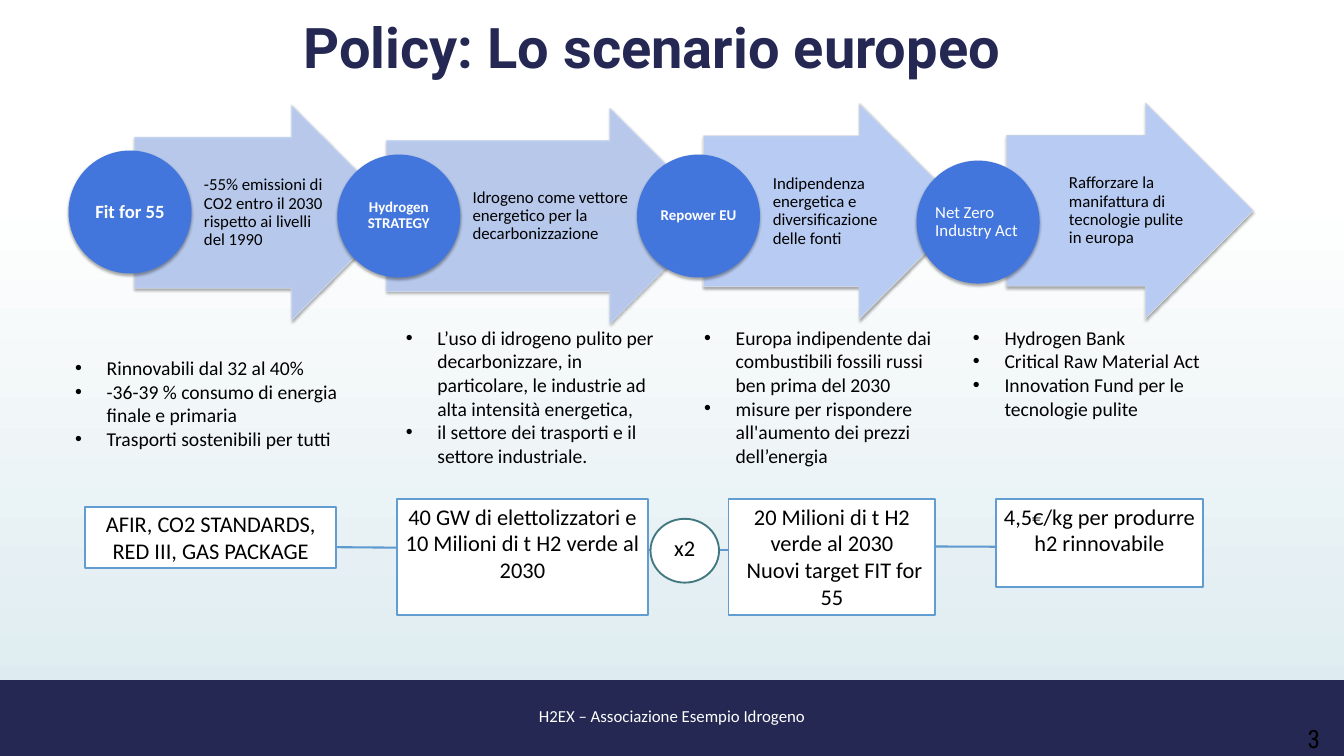
from pptx import Presentation
from pptx.dml.color import RGBColor
from pptx.enum.shapes import MSO_CONNECTOR, MSO_SHAPE
from pptx.enum.text import MSO_ANCHOR, PP_ALIGN
from pptx.oxml import parse_xml
from pptx.oxml.ns import nsdecls, qn
from pptx.util import Emu, Inches, Pt
from lxml import etree

NAVY = RGBColor(0x24, 0x28, 0x52)
BLUE = RGBColor(0x42, 0x76, 0xDC)
PALE_BLUE = RGBColor(0xB8, 0xCB, 0xF2)
LINK_BLUE = RGBColor(0x5D, 0x9A, 0xCF)
BOX_BLUE = RGBColor(0x62, 0x9D, 0xD1)
TEAL = RGBColor(0x43, 0x78, 0x81)
ICE = RGBColor(0xDA, 0xE9, 0xEE)
WHITE = RGBColor(255, 255, 255)
BLACK = RGBColor(0, 0, 0)
EDGE_1 = RGBColor(0xD3, 0xDF, 0xEE)
EDGE_2 = RGBColor(0xCD, 0xD8, 0xEF)
EDGE_3 = RGBColor(0xD8, 0xDB, 0xE2)

# Content: one entry per policy step; places are in inches
TITLE = "Policy: Lo scenario europeo"
FOOTER = "H2EX – Associazione Esempio Idrogeno"
PAGE = "3"
STEPS = [
    dict(name="Fit for 55", size=20, bold=True, align=PP_ALIGN.CENTER, circle=(1.02, 2.24),
         arrow=(2, 1.56, 3.94), edge=EDGE_1, alpha=90, caption_width=1.92, inset=0.05,
         caption="-55% emissioni di CO2 entro il 2030 rispetto ai livelli del 1990"),
    dict(name="Hydrogen STRATEGY", size=16, bold=True, align=PP_ALIGN.CENTER, circle=(5.02, 2.3),
         arrow=(5.75, 1.61, 4.93), edge=EDGE_2, alpha=90, caption_width=2.58, inset=0.05,
         caption="Idrogeno come vettore energetico per la decarbonizzazione"),
    dict(name="Repower EU", size=16, bold=True, align=PP_ALIGN.CENTER, circle=(9.48, 2.3),
         arrow=(10.47, 1.54, 3.92), edge=EDGE_3, alpha=100, caption_width=1.91, inset=0.05,
         caption="Indipendenza energetica e diversificazione delle fonti"),
    dict(name="Net Zero Industry Act", size=18, bold=False, align=PP_ALIGN.LEFT, circle=(13.64, 2.39),
         arrow=(14.98, 1.53, 3.67), edge=EDGE_3, alpha=100, caption_width=1.79, inset=0.01,
         caption="Rafforzare la manifattura di tecnologie pulite in europa"),
]
MEASURES = [
    ((1.02, 5.25, 4.44, 1.82), ["Rinnovabili dal 32 al 40%",
                                "-36-39\u00a0% consumo di energia finale e primaria",
                                "Trasporti sostenibili per tutti"]),
    ((5.94, 4.8, 3.96, 2.22), ["L’uso di idrogeno pulito per decarbonizzare, in particolare, "
                               "le industrie ad alta intensità energetica,",
                               "il settore dei trasporti e il settore industriale."]),
    ((10.38, 4.8, 3.73, 2.22), ["Europa indipendente dai combustibili fossili russi ben prima del 2030",
                                "misure per rispondere all'aumento dei prezzi dell’energia"]),
    ((14.38, 4.8, 4.29, 1.87), ["Hydrogen Bank", "Critical Raw Material Act",
                                "Innovation Fund per le tecnologie pulite"]),
]
TARGETS = [
    ((1.27, 7.54, 3.73, 0.91), ["AFIR, CO2 STANDARDS, RED III, GAS PACKAGE"]),
    ((5.91, 7.43, 3.73, 1.72), ["40 GW di elettolizzatori e 10 Milioni di t H2 verde al 2030"]),
    ((10.84, 7.43, 3.08, 1.72), ["20 Milioni di t H2 verde al 2030", " Nuovi target FIT for 55"]),
    ((14.82, 7.43, 3.08, 1.31), ["4,5€/kg per produrre h2 rinnovabile"]),
]
LINKS = [(4.67, 8.14, 7.21, 8.16), (9.46, 8.19, 12.03, 8.19), (13.28, 8.13, 15.82, 8.14)]

ARROW_HEIGHT, SHAFT, CIRCLE = 3.21, 0.7, 1.83

prs = Presentation()
prs.slide_width, prs.slide_height = Inches(20), Inches(11.25)
slide = prs.slides.add_slide(prs.slide_layouts[6])


def inches(box):
    return [Inches(v) for v in box]


def write(shape, lines, size, color=BLACK, font="Calibri", bold=False, align=PP_ALIGN.LEFT,
          anchor=MSO_ANCHOR.TOP, spacing=None, inset=None, bullets=False):
    frame = shape.text_frame
    frame.word_wrap = True
    frame.vertical_anchor = anchor
    if inset is not None:
        frame.margin_left = Inches(inset)
        frame.margin_right = Inches(min(inset, 0.03))
        frame.margin_top = frame.margin_bottom = Inches(0.01)
    for i, line in enumerate(lines):
        paragraph = frame.add_paragraph() if i else frame.paragraphs[0]
        paragraph.text = line
        paragraph.alignment = align
        if spacing:
            paragraph.line_spacing = spacing
        if bullets:
            props = paragraph._p.get_or_add_pPr()
            props.set("marL", str(Inches(0.47)))
            props.set("indent", str(-Inches(0.47)))
            etree.SubElement(props, qn("a:buFont")).set("typeface", "Arial")
            etree.SubElement(props, qn("a:buChar")).set("char", "•")
        paragraph.font.name = font
        paragraph.font.size = Pt(size)
        paragraph.font.bold = bold
        paragraph.font.color.rgb = color


def add_text(box, lines, size, **style):
    write(slide.shapes.add_textbox(*inches(box)), lines, size, **style)


def add_shape(kind, box, fill, line=None, width=2):
    shape = slide.shapes.add_shape(kind, *inches(box))
    shape.shadow.inherit = False
    shape.fill.solid()
    shape.fill.fore_color.rgb = fill
    if line is None:
        shape.line.fill.background()
    else:
        shape.line.color.rgb = line
        shape.line.width = Pt(width)
    return shape


def add_shadow(shape):
    effects = shape._element.spPr.find(qn("a:effectLst"))
    effects.append(parse_xml(
        f'<a:outerShdw {nsdecls("a")} blurRad="{Pt(3.1)}" dist="{Pt(1.8)}" dir="5400000" rotWithShape="0">'
        '<a:srgbClr val="000000"><a:alpha val="35000"/></a:srgbClr></a:outerShdw>'))


# Background
background = slide.background.fill
background.gradient()
background.gradient_angle = 270
for stop, (position, color) in zip(background.gradient_stops, [(0.25, WHITE), (1, ICE)]):
    stop.position = position
    stop.color.rgb = color

# Footer band and page number
write(add_shape(MSO_SHAPE.RECTANGLE, (0, 10.13, 20, 1.11), NAVY, NAVY), [FOOTER], 18, color=WHITE,
      align=PP_ALIGN.CENTER, anchor=MSO_ANCHOR.MIDDLE, spacing=0.7)
add_text((19.36, 10.72, 0.84, 0.57), [PAGE], 27, font="Roboto Condensed")

# Links that run behind the target boxes
for link in LINKS:
    connector = slide.shapes.add_connector(MSO_CONNECTOR.STRAIGHT, *inches(link))
    connector.line.color.rgb = LINK_BLUE
    connector.line.width = Pt(2.25)
    etree.SubElement(connector.line._get_or_add_ln(), qn("a:tailEnd")).set("type", "triangle")
    etree.SubElement(connector._element.spPr, qn("a:effectLst"))

# Policy arrows, captions and circles
for step in STEPS:
    left, top, width = step["arrow"]
    arrow = add_shape(MSO_SHAPE.RIGHT_ARROW, (left, top, width, ARROW_HEIGHT), PALE_BLUE, step["edge"], 0.75)
    arrow.adjustments[0], arrow.adjustments[1] = SHAFT, 0.5
    if step["alpha"] < 100:
        for color in arrow._element.spPr.iter(qn("a:srgbClr")):
            etree.SubElement(color, qn("a:alpha")).set("val", str(step["alpha"] * 1000))
    add_shadow(arrow)
    caption_box = (left + width / 4, top + ARROW_HEIGHT * (1 - SHAFT) / 2,
                   step["caption_width"], ARROW_HEIGHT * SHAFT)
    add_text(caption_box, [step["caption"]], 18, anchor=MSO_ANCHOR.MIDDLE, spacing=0.9, inset=step["inset"])
    circle = add_shape(MSO_SHAPE.OVAL, (*step["circle"], CIRCLE, CIRCLE), BLUE)
    add_shadow(circle)
    write(circle, [step["name"]], step["size"], color=WHITE, bold=step["bold"], align=step["align"],
          anchor=MSO_ANCHOR.MIDDLE, spacing=0.9, inset=0.01)

# Title
add_text((2.48, 0.16, 14.44, 1.18), [TITLE], 60, color=NAVY, font="Roboto", bold=True,
         align=PP_ALIGN.CENTER, anchor=MSO_ANCHOR.MIDDLE, spacing=0.9)

# Measures under each arrow
for box, lines in MEASURES:
    add_text(box, lines, 21, bullets=True)

# Target boxes and the doubling mark
for box, lines in TARGETS:
    write(add_shape(MSO_SHAPE.RECTANGLE, box, WHITE, BOX_BLUE), lines, 24, align=PP_ALIGN.CENTER)
write(add_shape(MSO_SHAPE.OVAL, (9.68, 7.72, 1.02, 0.95), WHITE, TEAL), ["x2"], 24,
      align=PP_ALIGN.CENTER, anchor=MSO_ANCHOR.MIDDLE, spacing=0.7)

prs.save("out.pptx")
